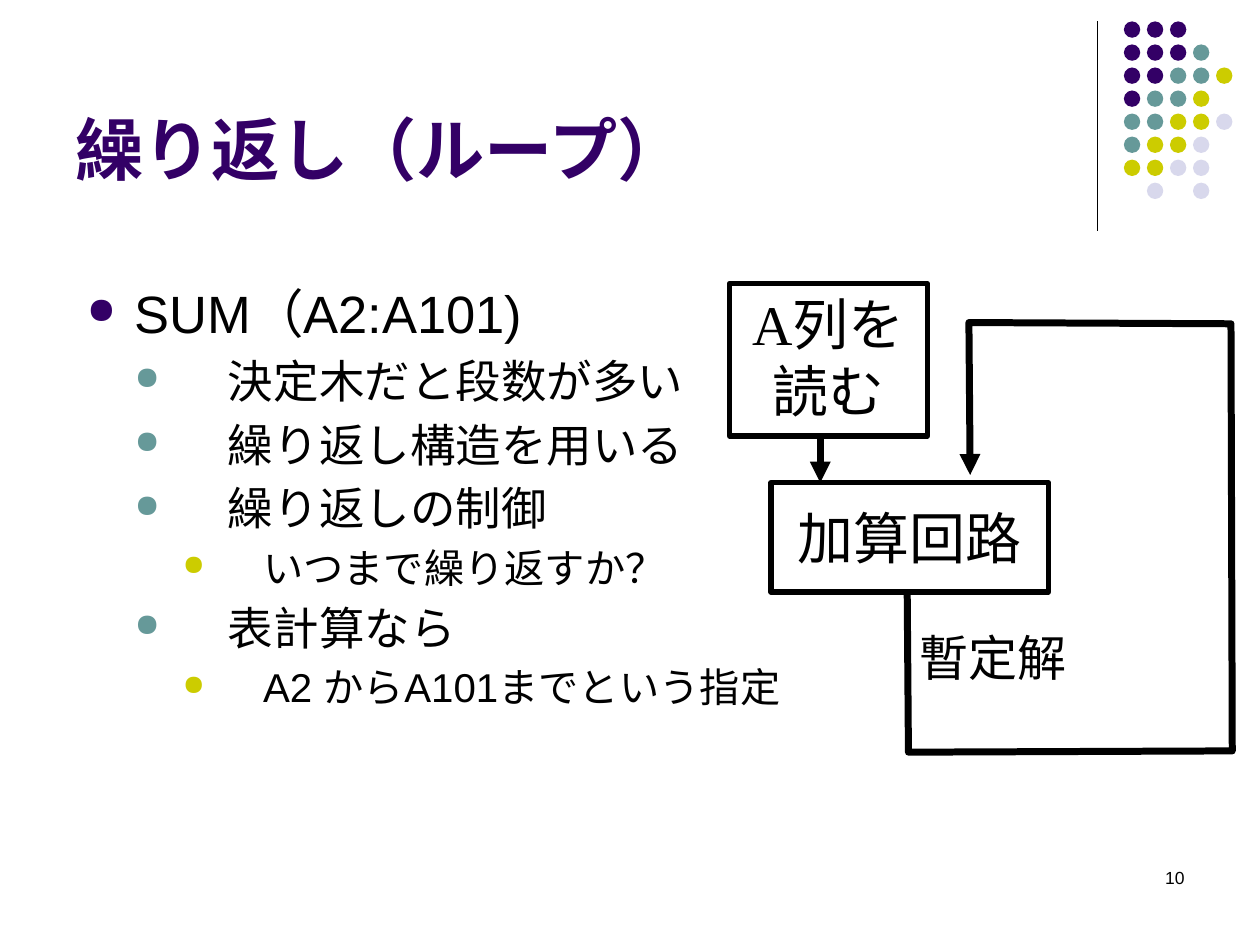
from dataclasses import dataclass

import pptx
import pptx.dml.color
import pptx.enum.shapes
import pptx.enum.text
import pptx.oxml.ns
import pptx.util
from lxml import etree
from pptx.util import Inches

PURPLE, TEAL, OLIVE, LAVENDER, BLACK, WHITE = (
    "330066", "669999", "CCCC00", "D8D8EC", "000000", "FFFFFF")
DOT_COLOURS = {"P": PURPLE, "T": TEAL, "O": OLIVE, "L": LAVENDER}
DOT_ROWS = ["PPP", "PPPT", "PPTTO", "PTTO", "TTOOL", "TOOL", "OOLL", " L L"]
LEVELS = [(30, 0.38, 0.38, PURPLE), (26, 0.76, 0.38, TEAL), (23, 1.08, 0.32, OLIVE)]
ALIGN = pptx.enum.text.PP_ALIGN
ANCHOR = pptx.enum.text.MSO_ANCHOR
SHAPE = pptx.enum.shapes.MSO_SHAPE


@dataclass
class Label:
    text: str
    at: tuple[float, float, float, float]
    size: int
    font: str = "Arial"
    colour: str = BLACK
    bold: bool = False
    align: ALIGN = ALIGN.LEFT
    anchor: ANCHOR = ANCHOR.TOP
    wrap: bool = True


@dataclass
class Bullet:
    level: int
    text: str


BULLETS = [
    Bullet(0, "SUM（A2:A101)"),
    Bullet(1, "\u3000決定木だと段数が多い".replace("\u3000", "　")),
    Bullet(1, "　繰り返し構造を用いる"),
    Bullet(1, "　繰り返しの制御"),
    Bullet(2, "　いつまで繰り返すか？"),
    Bullet(1, "　表計算なら"),
    Bullet(2, "　A2 からA101までという指定"),
]
BULLETS[1] = Bullet(1, "　決定木だと段数が多い")


def rgb(colour: str):
    return pptx.dml.color.RGBColor.from_string(colour)


def add_xml(parent, tag: str, **attributes: str):
    return etree.SubElement(parent, pptx.oxml.ns.qn(tag), attributes)


def style_line(line, width: float, arrow: bool = False) -> None:
    line.color.rgb = rgb(BLACK)
    line.width = pptx.util.Pt(width)
    if arrow:
        properties = line.fill._xPr
        add_xml(properties, "a:round")
        add_xml(properties, "a:tailEnd", type="triangle")


def write(shape, label: Label) -> None:
    frame = shape.text_frame
    frame.word_wrap = label.wrap
    frame.vertical_anchor = label.anchor
    paragraph = frame.paragraphs[0]
    paragraph.text = label.text
    paragraph.alignment = label.align
    paragraph.font.name = label.font
    paragraph.font.size = pptx.util.Pt(label.size)
    paragraph.font.bold = label.bold
    paragraph.font.color.rgb = rgb(label.colour)


def add_label(slide, label: Label) -> None:
    write(slide.shapes.add_textbox(*map(Inches, label.at)), label)


def add_box(slide, label: Label) -> None:
    box = slide.shapes.add_shape(SHAPE.RECTANGLE, *map(Inches, label.at))
    box.shadow.inherit = False
    box.fill.solid()
    box.fill.fore_color.rgb = rgb(WHITE)
    style_line(box.line, 3)
    write(box, label)


def add_line(slide, x: float, top: float, bottom: float, width: float, arrow: bool = False) -> None:
    line = slide.shapes.add_connector(
        pptx.enum.shapes.MSO_CONNECTOR.STRAIGHT, *map(Inches, (x, top, x, bottom)))
    style_line(line.line, width, arrow)
    add_xml(line._element.spPr, "a:effectLst")


def add_dots(slide) -> None:
    left, top, pitch, size = 8.92, 0.17, 1.28 / 7, 0.13
    for row, codes in enumerate(DOT_ROWS):
        for column, code in enumerate(codes):
            if code in DOT_COLOURS:
                dot = slide.shapes.add_shape(
                    SHAPE.OVAL, Inches(left + column * pitch), Inches(top + row * pitch),
                    Inches(size), Inches(size))
                dot.shadow.inherit = False
                dot.fill.solid()
                dot.fill.fore_color.rgb = rgb(DOT_COLOURS[code])
                dot.line.fill.background()


def add_bullets(slide, bullets: list[Bullet]) -> None:
    frame = slide.shapes.add_textbox(*map(Inches, (0.59, 2.18, 8.75, 4.67))).text_frame
    frame.word_wrap = True
    for index, bullet in enumerate(bullets):
        paragraph = frame.add_paragraph() if index else frame.paragraphs[0]
        size, margin, hanging, colour = LEVELS[bullet.level]
        paragraph.text = bullet.text
        paragraph.level = bullet.level
        paragraph.space_before = pptx.util.Pt(size * 0.2)
        properties = paragraph._p.get_or_add_pPr()
        properties.set("marL", str(Inches(margin)))
        properties.set("indent", str(-Inches(hanging)))
        add_xml(add_xml(properties, "a:buClr"), "a:srgbClr", val=colour)
        add_xml(properties, "a:buSzPct", val="70000")
        add_xml(properties, "a:buChar", char="●")
        paragraph.font.name = "Arial"
        paragraph.font.size = pptx.util.Pt(size)
        paragraph.font.color.rgb = rgb(BLACK)


def add_feedback_loop(slide) -> None:
    start, *corners = [
        (Inches(x), Inches(y)) for x, y in
        [(7.2, 4.7), (7.21, 5.97), (9.78, 5.96), (9.77, 2.57), (7.69, 2.56), (7.7, 3.77)]]
    builder = slide.shapes.build_freeform(*start)
    builder.add_line_segments(corners, close=False)
    loop = builder.convert_to_shape()
    loop.shadow.inherit = False
    loop.fill.background()
    style_line(loop.line, 4, arrow=True)


def main() -> None:
    """Build the slide about loops and save it."""
    deck = pptx.Presentation()
    deck.slide_width, deck.slide_height = Inches(10), Inches(7.5)
    slide = deck.slides.add_slide(deck.slide_layouts[6])
    serif = "Times New Roman"

    add_line(slide, 8.71, 0.17, 1.83, 0.75)
    add_dots(slide)
    add_label(slide, Label("10", (7.17, 6.83, 2.33, 0.5), 10, align=ALIGN.RIGHT))
    add_label(slide, Label("繰り返し（ループ）", (0.5, 0.13, 8.25, 1.42), 39,
                           colour=PURPLE, bold=True, anchor=ANCHOR.BOTTOM))
    add_bullets(slide, BULLETS)
    add_line(slide, 6.51, 2.81, 3.83, 4, arrow=True)
    add_box(slide, Label("加算回路", (6.12, 3.83, 2.2, 0.87), 32, serif,
                         align=ALIGN.CENTER, anchor=ANCHOR.MIDDLE, wrap=False))
    add_feedback_loop(slide)
    add_box(slide, Label("A列を読む", (5.79, 2.25, 1.57, 1.21), 32, serif, align=ALIGN.CENTER))
    add_label(slide, Label("暫定解", (7.2, 4.93, 1.73, 0.57), 28, serif))
    deck.save("out.pptx")


if __name__ == "__main__":
    main()
